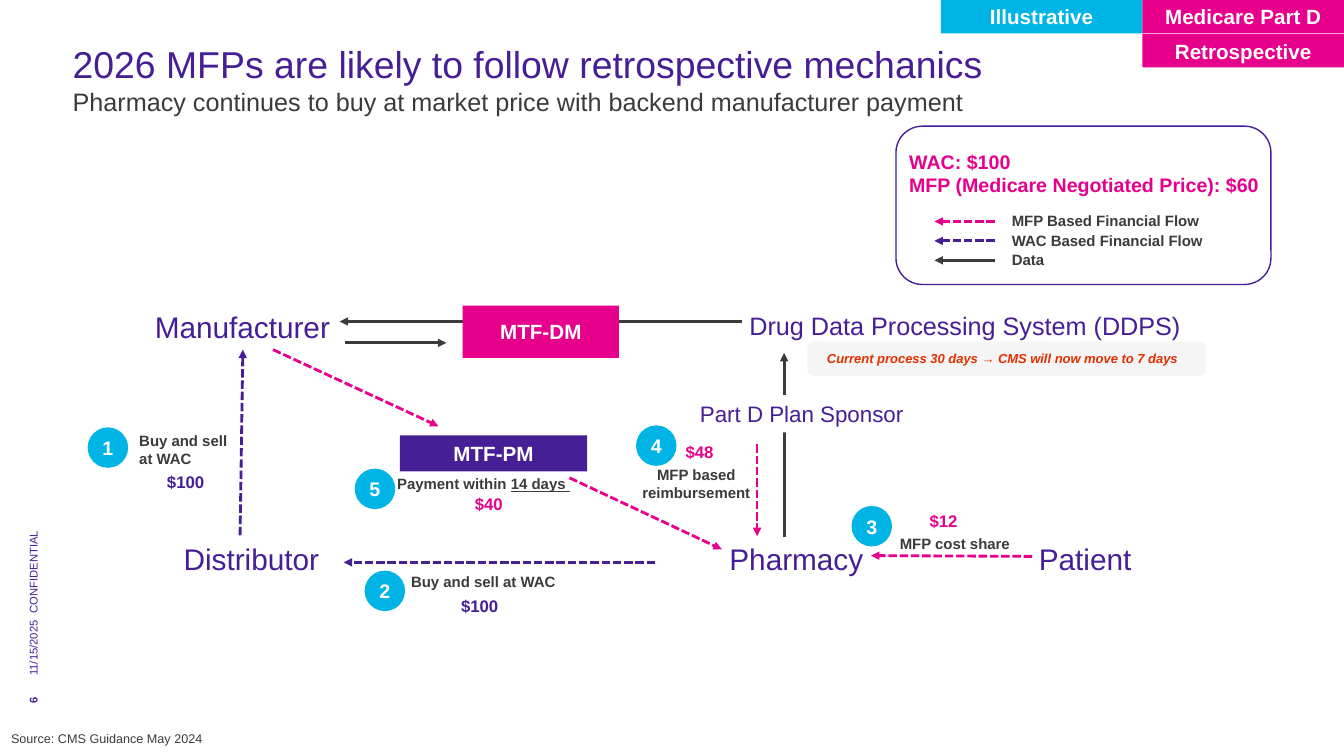
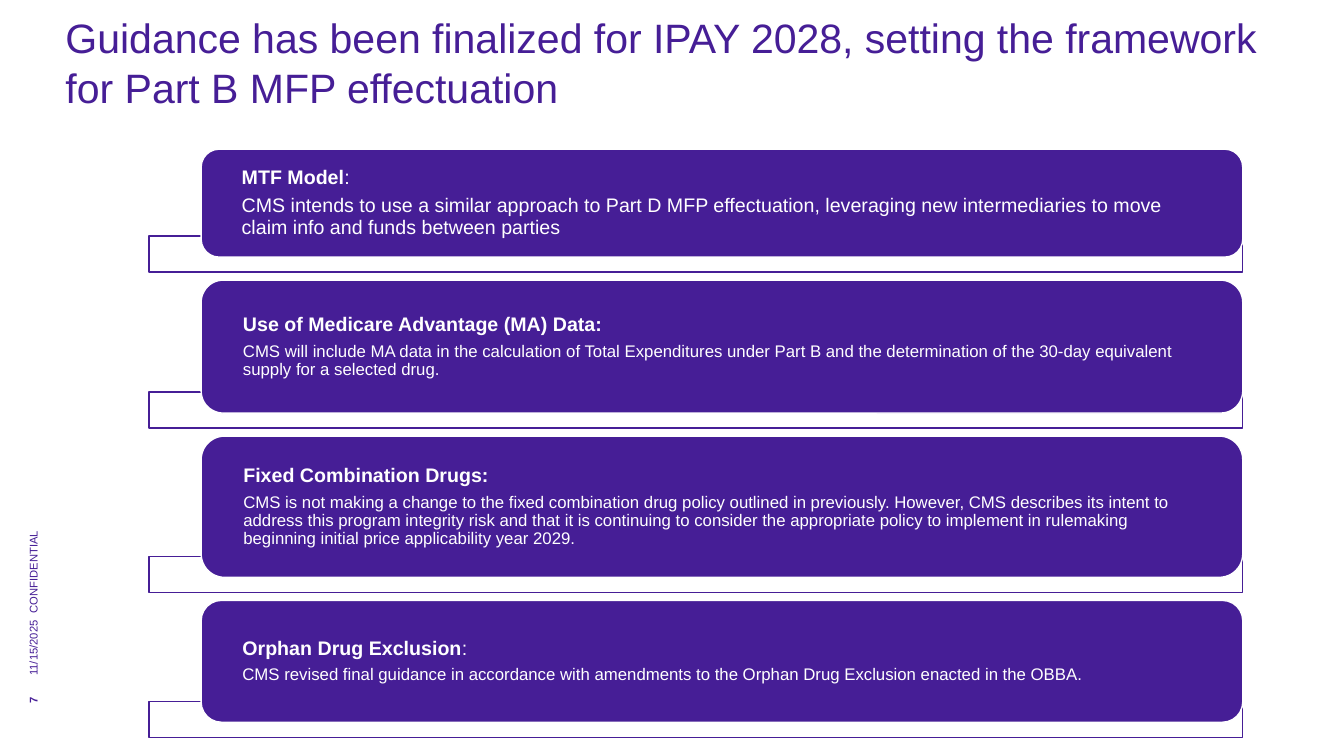
from dataclasses import dataclass
from itertools import accumulate

from lxml.etree import SubElement as Sub
from pptx import Presentation
from pptx.dml.color import RGBColor as Rgb
from pptx.enum.dml import MSO_LINE as Dash
from pptx.enum.shapes import MSO_CONNECTOR as Conn, MSO_SHAPE as Form
from pptx.enum.text import MSO_ANCHOR as Anchor, PP_ALIGN as Align
from pptx.oxml.ns import qn
from pptx.util import Cm, Pt


@dataclass(frozen=True)
class Theme:
    """Colours, type sizes and font of the deck."""
    purple: str = "461E96"
    pink: str = "E6008C"
    cyan: str = "00B4E6"
    ink: str = "3B3B3B"
    red: str = "E22F00"
    pale: str = "F5F5F5"
    white: str = "FFFFFF"
    font: str = "Arial"
    head: float = 29.3
    lead: float = 26.7
    node: float = 21.3
    sub: float = 18
    plan: float = 16
    tag: float = 14.7
    body: float = 14
    price: float = 12
    label: float = 10.7
    note: float = 9.3
    source: float = 9
    foot: float = 8


T = Theme()
LEFT, MID = Align.LEFT, Align.CENTER


def run(para, text, size, color, bold=False, ital=False, under=False):
    """Add one styled run to a paragraph."""
    part = para.add_run()
    part.text = text
    font = part.font
    font.name, font.size = T.font, Pt(size)
    font.bold, font.italic, font.underline = bold, ital, under
    font.color.rgb = Rgb.from_string(color)


def fill(frame, paras, align=LEFT, anchor=Anchor.TOP, pad=(0, 0), wrap=True):
    """Fill a text frame with paragraphs, each a list of runs."""
    frame.word_wrap, frame.vertical_anchor = wrap, anchor
    frame.margin_left, frame.margin_right = map(Cm, pad)
    frame.margin_top = frame.margin_bottom = Cm(0)
    for i, runs in enumerate(paras):
        para = frame.add_paragraph() if i else frame.paragraphs[0]
        para.alignment = align
        for item in runs:
            run(para, *item)


def words(slide, box, paras, **style):
    """Add a text box."""
    shape = slide.shapes.add_textbox(*map(Cm, box))
    fill(shape.text_frame, paras, **style)
    return shape


def block(slide, form, box, color=None, edge=None, paras=(), align=MID, pad=(0, 0)):
    """Add a preset shape with optional fill, edge and text."""
    shape = slide.shapes.add_shape(form, *map(Cm, box))
    shape.shadow.inherit = False
    if color:
        shape.fill.solid()
        shape.fill.fore_color.rgb = Rgb.from_string(color)
    else:
        shape.fill.background()
    if edge:
        shape.line.color.rgb = Rgb.from_string(edge)
        shape.line.width = Pt(1)
    else:
        shape.line.fill.background()
    fill(shape.text_frame, paras, align, Anchor.MIDDLE, pad)
    return shape


def arrow(slide, start, end, color):
    """Draw an arrow; money flows are dashed, data is solid."""
    link = slide.shapes.add_connector(Conn.STRAIGHT, *map(Cm, (*start, *end)))
    link.line.color.rgb = Rgb.from_string(color)
    link.line.width = Pt(2)
    if color != T.ink:
        link.line.dash_style = Dash.SQUARE_DOT
    props = link._element.spPr
    Sub(props.find(qn("a:ln")), qn("a:tailEnd"), type="triangle")
    Sub(props, qn("a:effectLst"))


def start(deck, number, box, lines, anchor):
    """Open a slide with its title and side footer."""
    slide = deck.slides.add_slide(deck.slide_layouts[5])
    title = slide.shapes.title
    title.left, title.top, title.width, title.height = map(Cm, box)
    fill(title.text_frame, [lines[:1]], anchor=anchor)
    for line in lines[1:]:
        para = title.text_frame.paragraphs[0]
        para.add_line_break()
        run(para, *line)
    side = ((str(number), 17.73, True), ("11/15/2025", 17.03, False),
            ("CONFIDENTIAL", 15.46, False))
    for text, base, bold in side:
        tall = 0.6 if bold else 2.4
        shape = words(slide, (0.67, base - tall, 0.41, tall),
                      [[(text, T.foot, T.purple, bold)]])
        shape.text_frame._txBody.bodyPr.set("vert", "vert270")
    return slide


def tags(slide, box):
    """Stack the corner tags inward from the right edge of the box."""
    x, y, w, h = box
    wide, tall = w / 2, h / 2
    for text, col, row, color in (("Illustrative", 0, 0, T.cyan),
                                  ("Medicare Part D", 1, 0, T.pink),
                                  ("Retrospective", 1, 1, T.pink)):
        block(slide, Form.RECTANGLE, (x + col * wide, y + row * tall, wide, tall - 0.02),
              color, paras=[[(text, T.tag, T.white, True)]])


def legend(slide, box):
    """Draw the price box and the key to the arrows."""
    x, y, w, h = box
    block(slide, Form.ROUNDED_RECTANGLE, box, edge=T.purple)
    prices = ("WAC: $100", "MFP (Medicare Negotiated Price): $60")
    words(slide, (x + 0.33, y + 0.59, w - 0.4, 1.3),
          [[(text, T.body, T.pink, True)] for text in prices], wrap=False)
    for i, (text, color) in enumerate((("MFP Based Financial Flow", T.pink),
                                       ("WAC Based Financial Flow", T.purple),
                                       ("Data", T.ink))):
        row = y + 2.4 + i * 0.49
        arrow(slide, (x + 2.49, row), (x + 0.97, row), color)
        words(slide, (x + 2.92, row - 0.24, w - 3.1, 0.5),
              [[(text, T.label, T.ink, True)]])


def links(slide, x, y):
    """Draw the flows between the parties."""
    for color, x1, y1, x2, y2 in (
            (T.purple, 4.05, 5.99, 4.12, 1.31),
            (T.purple, 14.51, 6.67, 6.66, 6.67),
            (T.pink, 24.01, 6.52, 19.95, 6.5),
            (T.ink, 16.69, 0.6, 6.56, 0.6),
            (T.ink, 6.69, 1.14, 9.25, 1.14),
            (T.ink, 17.76, 6.04, 17.76, 1.39),
            (T.pink, 12.35, 4.54, 16.19, 6.34),
            (T.pink, 4.88, 1.31, 9.05, 3.24),
            (T.pink, 17.08, 3.7, 17.08, 6.01)):
        arrow(slide, (x + x1, y + y1), (x + x2, y + y2), color)


def nodes(slide, x, y):
    """Place the parties and the two facilitator boxes."""
    for text, dx, dy, w, size, align in (
            ("Manufacturer", 1.33, 0.28, 5.56, T.node, MID),
            ("Distributor", 2.11, 6.12, 4.45, T.node, MID),
            ("Drug Data Processing System (DDPS)", 15.88, 0.33, 12.88, T.sub, MID),
            ("Pharmacy", 15.53, 6.12, 5.08, T.node, MID),
            ("Patient", 24.18, 6.12, 4.5, T.node, LEFT)):
        words(slide, (x + dx, y + dy, w, 0.9), [[(text, size, T.purple)]], align=align)
    for text, dx, dy, w, h, color, ink, size in (
            ("MTF-DM", 9.66, 0.2, 3.94, 1.32, T.pink, T.white, T.tag),
            ("MTF-PM", 8.08, 3.47, 4.72, 0.91, T.purple, T.white, T.tag),
            ("Part D Plan Sponsor", 14.33, 2.46, 7.75, 0.94, T.white, T.purple, T.plan)):
        block(slide, Form.RECTANGLE, (x + dx, y + dy, w, h), color,
              paras=[[(text, size, ink, color != T.white)]])


def steps(slide, x, y):
    """Place the numbered steps with caption and price."""
    deal = "Buy and sell at WAC"
    plans = (
        ((0.21, 3.27), (1.51, 3.37, 2.34), (1.84, 4.39), LEFT, (deal,), "$100", T.purple),
        ((7.19, 6.88), (8.36, 6.93, 4.2), (9.25, 7.51), LEFT, (deal,), "$100", T.purple),
        ((19.46, 5.25), (19.08, 5.96, 5.97), (20.94, 5.36), MID,
         ("MFP cost share",), "$12", T.pink),
        ((14.03, 3.22), (14.05, 4.23, 3), (14.79, 3.63), MID,
         ("MFP based reimbursement",), "$48", T.pink),
        ((6.94, 4.31), (7.96, 4.46, 4.45), (9.48, 4.95), MID,
         ("Payment within ", "14 days "), "$40", T.pink))
    for i, (disc, cap, tab, align, parts, price, color) in enumerate(plans, 1):
        block(slide, Form.OVAL, (x + disc[0], y + disc[1], 1.02, 1.02), T.cyan,
              paras=[[(str(i), T.body, T.white, True)]])
        runs = [(text, T.label, T.ink, True, False, j > 0) for j, text in enumerate(parts)]
        words(slide, (x + cap[0], y + cap[1], cap[2], 0.46), [runs], align=align)
        words(slide, (x + tab[0], y + tab[1], 1.68, 0.51),
              [[(price, T.price, color, True)]], align=MID)


def flow(slide, box):
    """Draw the payment flow diagram."""
    x, y = box[:2]
    text = "Current process 30 days → CMS will now move to 7 days"
    block(slide, Form.ROUNDED_RECTANGLE, (x + 18.35, y + 1.11, 10.03, 0.86), T.pale,
          paras=[[(text, T.note, T.red, True, True)]], align=LEFT, pad=(0.45, 0))
    links(slide, x, y)
    nodes(slide, x, y)
    steps(slide, x, y)


def cards(slide, box, items):
    """Stack cards over outlined trays with equal gaps."""
    x, y, w, h = box
    gap, shift = 0.58, 1.31
    tops = accumulate((item[0] + gap for item in items), initial=y)
    for top, (tall, runs, text, size) in zip(tops, items):
        block(slide, Form.RECTANGLE, (x, top + tall - 0.53, w, 0.91), T.white, T.purple)
        paras = [[(part, T.body, T.white, bold) for part, bold in runs],
                 [(text, size, T.white)]]
        card = block(slide, Form.ROUNDED_RECTANGLE, (x + shift, top, w - shift, tall),
                     T.purple, T.white, paras, LEFT, (0.89, 0.89))
        for para in card.text_frame.paragraphs:
            para.line_spacing = 0.9
            para.space_after = Pt(5)


def main():
    """Build and save the deck."""
    deck = Presentation()
    deck.slide_width, deck.slide_height = Cm(33.87), Cm(19.05)

    slide = start(deck, 6, (1.83, 1.04, 29.49, 1.9), [
        ("2026 MFPs are likely to follow retrospective mechanics", T.lead, T.purple),
        ("Pharmacy continues to buy at market price with backend manufacturer payment",
         T.sub, T.ink)], Anchor.TOP)
    tags(slide, (23.71, 0, 10.16, 1.72))
    legend(slide, (22.58, 3.18, 9.45, 3.99))
    flow(slide, (2, 7.5, 29, 8.5))
    words(slide, (0.28, 18.42, 4.85, 0.5),
          [[("Source: CMS Guidance May 2024", T.source, T.ink)]], wrap=False)

    slide = start(deck, 7, (1.65, 0.23, 30.56, 2.67), [
        ("Guidance has been finalized for IPAY 2028, setting the framework for Part B "
         "MFP effectuation", T.head, T.purple)], Anchor.MIDDLE)
    cards(slide, (3.76, 3.76, 27.56, 14.8), (
        (2.72, [("MTF Model", True), (":", False)],
         "CMS intends to use a similar approach to Part D MFP effectuation, leveraging "
         "new intermediaries to move claim info and funds between parties", T.body),
        (3.35, [("Use of Medicare Advantage (MA) Data:", True)],
         "CMS will include MA data in the calculation of Total Expenditures under Part B "
         "and the determination of the 30-day equivalent supply for a selected drug.",
         T.price),
        (3.56, [("Fixed Combination Drugs:", True)],
         "CMS is not making a change to the fixed combination drug policy outlined in "
         "previously. However, CMS describes its intent to address this program integrity "
         "risk and that it is continuing to consider the appropriate policy to implement "
         "in rulemaking beginning initial price applicability year 2029.", T.price),
        (3.07, [("Orphan Drug Exclusion", True), (":", False)],
         "CMS revised final guidance in accordance with amendments to the Orphan Drug "
         "Exclusion enacted in the OBBA.", T.price)))
    deck.save("out.pptx")


if __name__ == "__main__":
    main()
